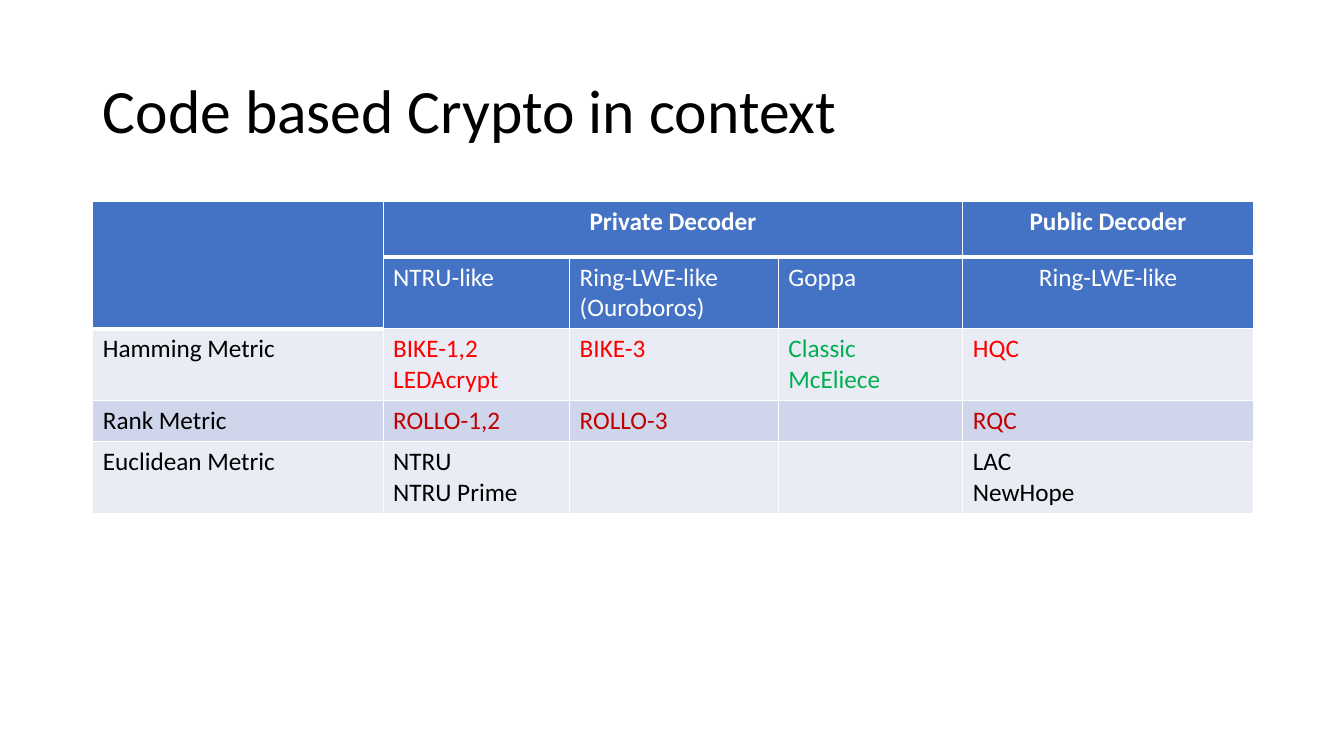
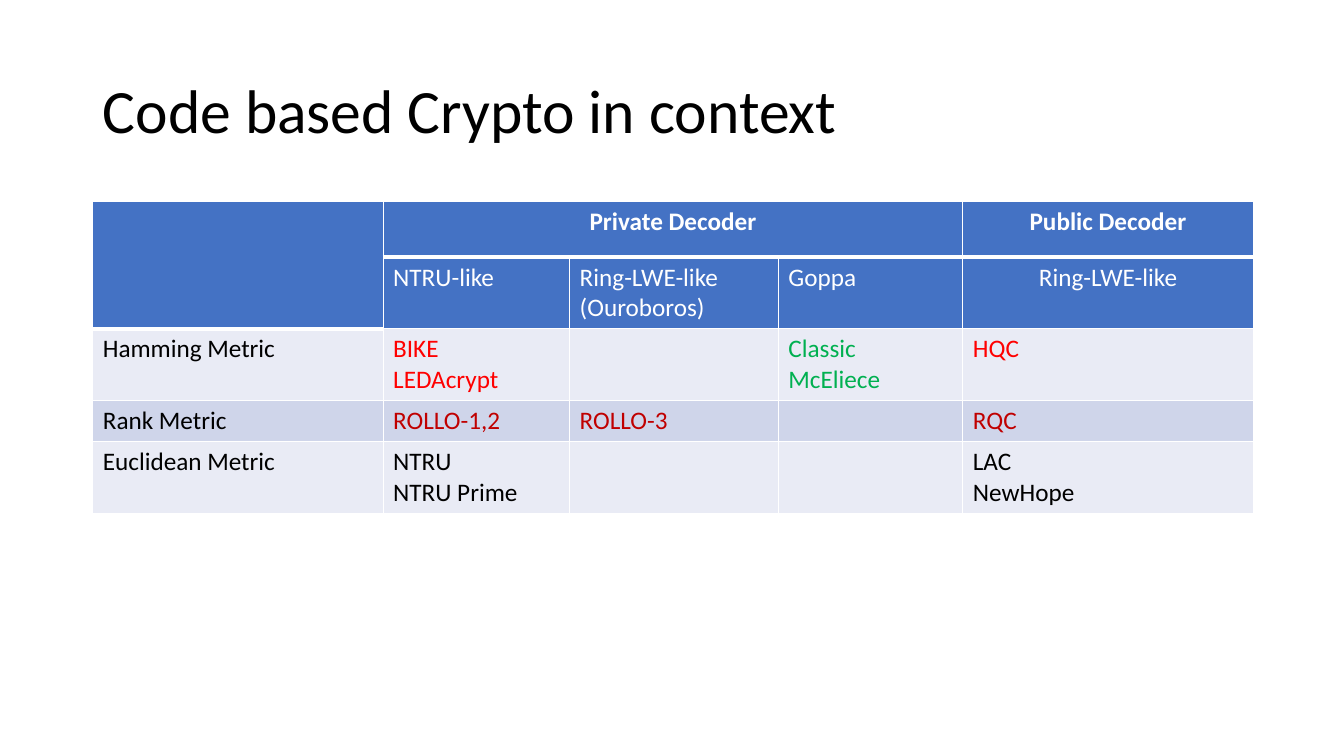
from lxml.etree import SubElement
from pptx import Presentation
from pptx.dml.color import RGBColor
from pptx.enum.text import MSO_ANCHOR as Anchor, PP_ALIGN as Align
from pptx.oxml.ns import qn
from pptx.util import Inches, Pt

BLACK = RGBColor(0x00, 0x00, 0x00)
WHITE = RGBColor(0xFF, 0xFF, 0xFF)
BLUE = RGBColor(0x44, 0x72, 0xC4)
PALE = RGBColor(0xE9, 0xEB, 0xF5)
MID = RGBColor(0xCF, 0xD5, 0xEA)
RED = RGBColor(0xFF, 0x00, 0x00)
DARK = RGBColor(0xC0, 0x00, 0x00)
GREEN = RGBColor(0x00, 0xB0, 0x50)
FONT = "Calibri"

TITLE = "Code based Crypto in context"
LEFT, WIDTH = 0.92, 11.5
COLS = [2.88, 1.85, 2.07, 1.83, 2.88]
ROWS = [0.55, 0.7, 0.71, 0.41, 0.71]
FILLS = [BLUE, BLUE, PALE, MID, PALE]

# Each cell is (text, colour); a line break starts a new paragraph.
NONE = ("", BLACK)
HEAD = [
    [("", WHITE), ("Private Decoder", WHITE), NONE, NONE, ("Public Decoder", WHITE)],
    [NONE, ("NTRU-like", WHITE), ("Ring-LWE-like\n(Ouroboros)", WHITE),
     ("Goppa", WHITE), ("Ring-LWE-like", WHITE)],
]
TAIL = [
    [("Rank Metric", BLACK), ("ROLLO-1,2", DARK), ("ROLLO-3", DARK), NONE, ("RQC", DARK)],
    [("Euclidean Metric", BLACK), ("NTRU\nNTRU Prime", BLACK), NONE, NONE,
     ("LAC\nNewHope", BLACK)],
]
# The Hamming entries (NTRU-like, Ring-LWE-like) that differ by slide
HAMMING = [
    [("BIKE-1,2\nLEDAcrypt", RED), ("BIKE-3", RED)],
    [("BIKE\nLEDAcrypt", RED), NONE],
]


def add_run(para, text, size, color, bold=False):
    run = para.add_run()
    run.text = text
    font = run.font
    font.name, font.size, font.bold = FONT, Pt(size), bold
    font.color.rgb = color


def add_title(slide):
    title = slide.shapes.title
    title.left, title.top = Inches(LEFT), Inches(0.4)
    title.width, title.height = Inches(WIDTH), Inches(1.45)
    frame = title.text_frame
    frame.vertical_anchor = Anchor.MIDDLE
    para = frame.paragraphs[0]
    para.alignment, para.line_spacing = Align.LEFT, 0.9
    add_run(para, TITLE, 44, BLACK)


def set_edges(cell, row, col):
    """White grid, with a heavy rule under the top row and the corner cell."""
    heavy = {
        "T": (row == 1 and col > 0) or (row == 2 and col == 0),
        "B": row == 0 or (row == 1 and col == 0),
    }
    props = cell._tc.get_or_add_tcPr()
    for side in "LRTB":
        width = Pt(3 if heavy.get(side) else 1)
        line = SubElement(props, qn(f"a:ln{side}"), w=str(width))
        fill = SubElement(line, qn("a:solidFill"))
        SubElement(fill, qn("a:srgbClr"), val=str(WHITE))


def fill_cell(cell, row, col, text, color):
    set_edges(cell, row, col)
    cell.fill.solid()
    cell.fill.fore_color.rgb = FILLS[row]
    frame = cell.text_frame
    for i, part in enumerate(text.split("\n")):
        para = frame.add_paragraph() if i else frame.paragraphs[0]
        para.alignment = Align.CENTER if row == 0 or (row == 1 and col == 4) else Align.LEFT
        if part:
            add_run(para, part, 18, color, bold=row == 0)


def add_grid(slide, data):
    frame = slide.shapes.add_table(len(ROWS), len(COLS), Inches(LEFT), Inches(2),
                                   Inches(WIDTH), Inches(sum(ROWS)))
    table = frame.table
    for col, width in zip(table.columns, COLS):
        col.width = Inches(width)
    for row, height in zip(table.rows, ROWS):
        row.height = Inches(height)
    for r, line in enumerate(data):
        for c, (text, color) in enumerate(line):
            fill_cell(table.cell(r, c), r, c, text, color)
    table.cell(0, 0).merge(table.cell(1, 0))
    table.cell(0, 1).merge(table.cell(0, 3))


def main():
    deck = Presentation()
    deck.slide_width, deck.slide_height = Inches(13.33), Inches(7.5)
    for pair in HAMMING:
        slide = deck.slides.add_slide(deck.slide_layouts[5])
        add_title(slide)
        row = [("Hamming Metric", BLACK), *pair, ("Classic McEliece", GREEN), ("HQC", RED)]
        add_grid(slide, [*HEAD, row, *TAIL])
    deck.save("out.pptx")


if __name__ == "__main__":
    main()
